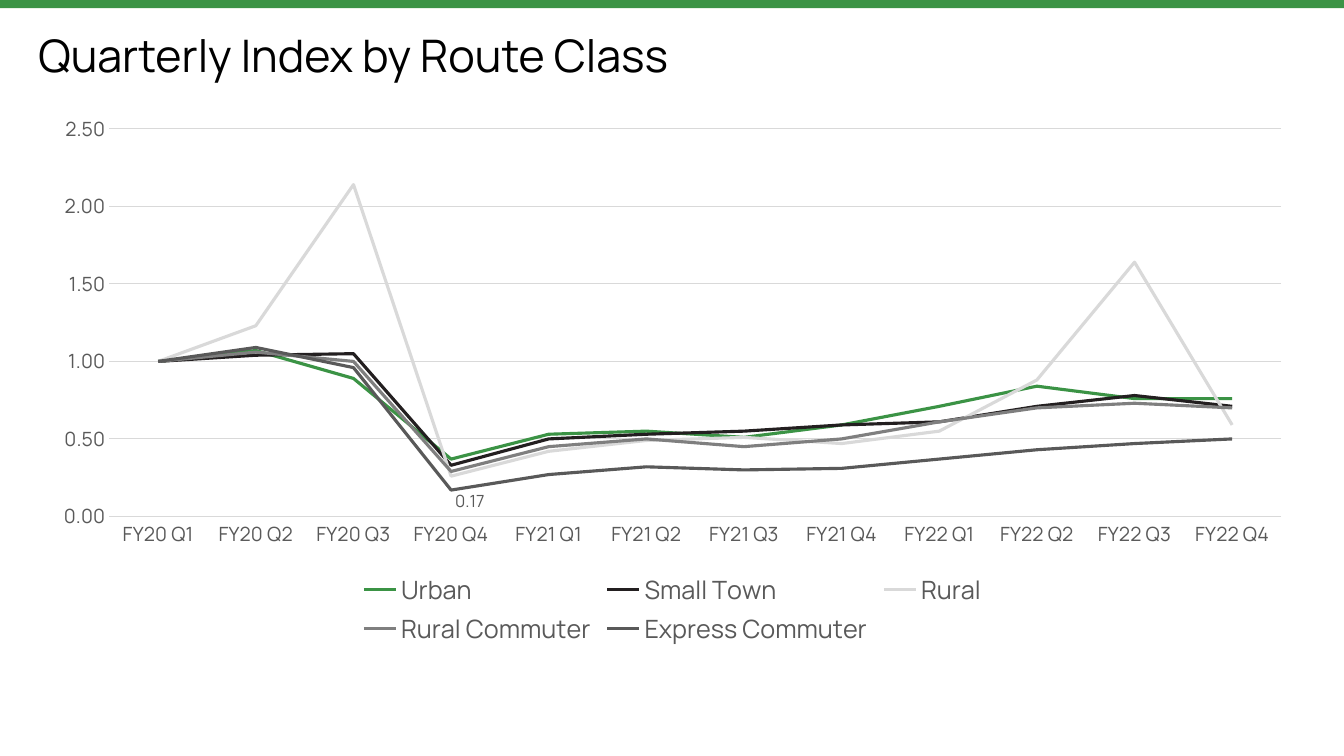
from lxml.etree import SubElement
from pptx import Presentation
from pptx.chart.data import CategoryChartData
from pptx.dml.color import RGBColor
from pptx.enum.chart import XL_CHART_TYPE, XL_LABEL_POSITION, XL_LEGEND_POSITION, XL_TICK_MARK
from pptx.enum.shapes import MSO_SHAPE
from pptx.enum.text import MSO_ANCHOR
from pptx.oxml import parse_xml
from pptx.oxml.ns import nsdecls, qn
from pptx.util import Pt

TITLE = "Quarterly Index by Route Class"
FONT = "Manrope"
COLORS = {
    "green": "3B9345",
    "ink": "231F20",
    "light": "D9D9D9",
    "mid": "7F7F7F",
    "dark": "595959",
    "black": "000000",
}
QUARTERS = [f"FY{year} Q{q}" for year in (20, 21, 22) for q in (1, 2, 3, 4)]
ROUTES = [
    ("Urban", "green", (1, 1.07, 0.89, 0.37, 0.53, 0.55, 0.51, 0.59, 0.71, 0.84, 0.76, 0.76)),
    ("Small Town", "ink", (1, 1.04, 1.05, 0.33, 0.5, 0.53, 0.55, 0.59, 0.61, 0.71, 0.78, 0.71)),
    ("Rural", "light", (1, 1.23, 2.14, 0.26, 0.42, 0.49, 0.51, 0.47, 0.55, 0.88, 1.64, 0.59)),
    ("Rural Commuter", "mid", (1, 1.06, 1, 0.29, 0.45, 0.5, 0.45, 0.5, 0.61, 0.7, 0.73, 0.7)),
    ("Express Commuter", "dark", (1, 1.09, 0.96, 0.17, 0.27, 0.32, 0.3, 0.31, 0.37, 0.43, 0.47, 0.5)),
]
LOW_QUARTER = QUARTERS.index("FY20 Q4")
WIDTH, HEIGHT = 960, 540
LEFT, CONTENT_WIDTH = 27.4, 905.8


def rgb(name):
    return RGBColor.from_string(COLORS[name])


def set_font(font, size, color):
    font.name = FONT
    font.size = Pt(size)
    font.color.rgb = rgb(color)


def set_line(line, color, width):
    line.color.rgb = rgb(color)
    line.width = Pt(width)


def manual_layout(**values):
    layout = parse_xml(f"<c:layout {nsdecls('c')}/>")
    manual = SubElement(layout, qn("c:manualLayout"))
    for tag, val in values.items():
        SubElement(manual, qn(f"c:{tag}")).set("val", str(val))
    return layout


def place(parent, before, layout):
    for old in parent.findall(qn("c:layout")):
        parent.remove(old)
    parent.find(qn(before)).addnext(layout)


prs = Presentation()
prs.slide_width, prs.slide_height = Pt(WIDTH), Pt(HEIGHT)
s = prs.slides.add_slide(prs.slide_layouts[6])

bar = s.shapes.add_shape(MSO_SHAPE.RECTANGLE, 0, 0, Pt(WIDTH), Pt(5.8))
bar.shadow.inherit = False
bar.fill.solid()
bar.fill.fore_color.rgb = rgb("green")
bar.line.fill.background()

tf = s.shapes.add_textbox(Pt(LEFT), Pt(23.8), Pt(CONTENT_WIDTH), Pt(34.6)).text_frame
tf.word_wrap = True
tf.vertical_anchor = MSO_ANCHOR.MIDDLE
tf.margin_left = tf.margin_top = tf.margin_right = tf.margin_bottom = 0
p = tf.paragraphs[0]
p.text = TITLE
p.line_spacing = 0.9
set_font(p.font, 32, "black")

data = CategoryChartData(number_format="#,##0.00")
data.categories = QUARTERS
for name, _, values in ROUTES:
    data.add_series(name, values)
chart = s.shapes.add_chart(
    XL_CHART_TYPE.LINE, Pt(LEFT), Pt(74.9), Pt(CONTENT_WIDTH), Pt(389.5), data
).chart
chart.has_title = False
set_font(chart.font, 10, "black")

for series, (_, color, _) in zip(chart.plots[0].series, ROUTES):
    series.smooth = False
    set_line(series.format.line, color, 2.25)
chart.plots[0].vary_by_categories = False

cat, val = chart.category_axis, chart.value_axis
for axis in (cat, val):
    axis.major_tick_mark = axis.minor_tick_mark = XL_TICK_MARK.NONE
    set_font(axis.tick_labels.font, 14, "dark")
set_line(cat.format.line, "light", 0.75)
val.format.line.fill.background()
val.minimum_scale, val.maximum_scale, val.major_unit = 0, 2.5, 0.5
val.tick_labels.number_format = "#,##0.00"
val.tick_labels.number_format_is_linked = False
set_line(val.major_gridlines.format.line, "light", 0.75)

chart.has_legend = True
legend = chart.legend
legend.position = XL_LEGEND_POSITION.BOTTOM
legend.include_in_layout = False
set_font(legend.font, 18, "dark")

express = chart.plots[0].series[-1]
label = express.points[LOW_QUARTER].data_label
set_font(label.font, 12, "dark")
label.position = XL_LABEL_POSITION.RIGHT
dlbl = express.data_labels._element.find(qn("c:dLbl"))
place(dlbl, "c:idx", manual_layout(x=0, y=0.02))

plot_area = chart._chartSpace.chart.plotArea
for old in plot_area.findall(qn("c:layout")):
    plot_area.remove(old)
plot_area.insert(0, manual_layout(
    layoutTarget="inner", xMode="edge", yMode="edge", x=0.056, y=0.044, w=0.924, h=0.711))
place(legend._element, "c:legendPos", manual_layout(
    xMode="edge", yMode="edge", x=0.25, y=0.85, w=0.5, h=0.15))

express.data_labels.show_value = False
prs.save("out.pptx")
